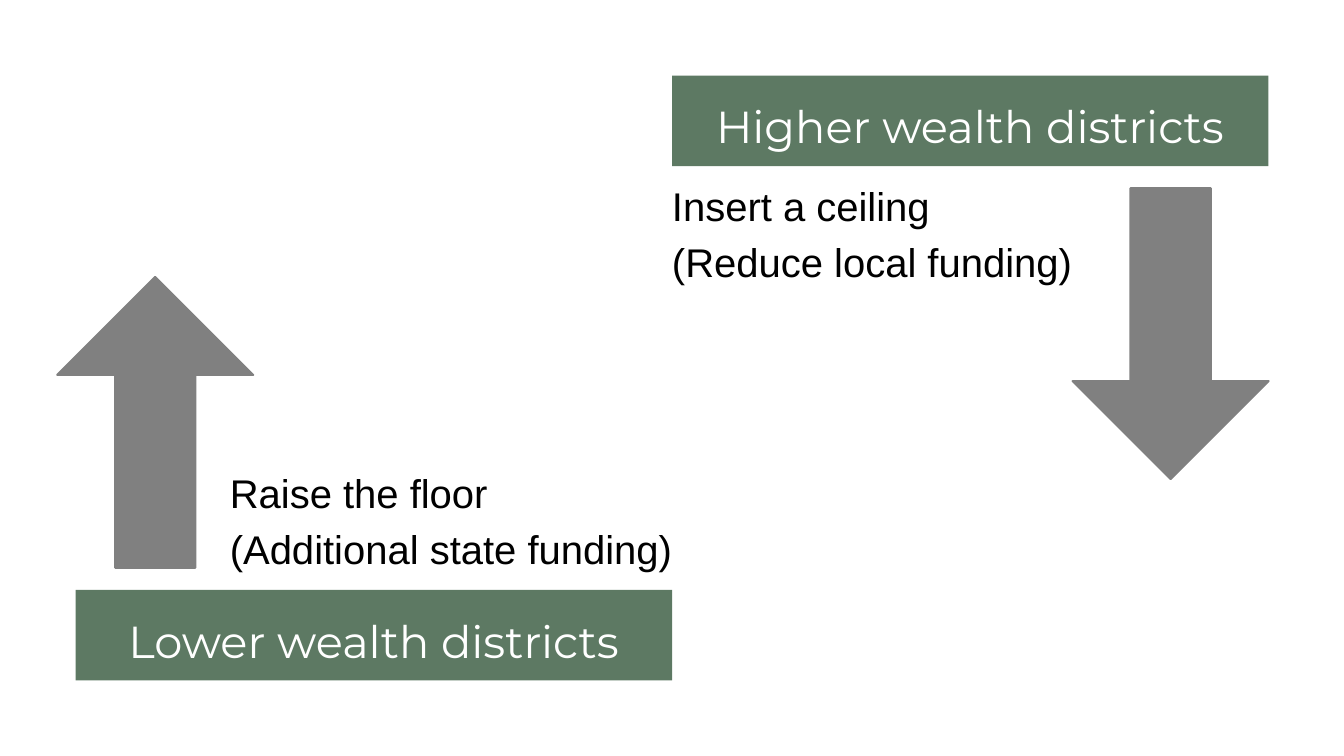
from pptx import Presentation
from pptx.dml.color import RGBColor
from pptx.enum.shapes import MSO_SHAPE
from pptx.enum.text import MSO_ANCHOR, PP_ALIGN
from pptx.util import Pt

SLIDE_WIDTH, SLIDE_HEIGHT = 1440, 810
GREEN, GRAY, WHITE, BLACK = "5D7963", "808080", "FFFFFF", "000000"

# Content: boxes are (left, top, width, height) in points
DISTRICTS = [
    {
        "title": "Higher wealth districts",
        "banner": (720, 81, 639, 97),
        "title_box": (689.76, 87.12, 699.12, 72),
        "action": ["Insert a ceiling", "(Reduce local funding)"],
        "action_box": (720, 185.76, 527.76, 120.96),
        "arrow": (1149.12, 201.6, 210.24, 311.76),
        "rotation": 180,
    },
    {
        "title": "Lower wealth districts",
        "banner": (81, 632, 639, 97),
        "title_box": (80.64, 638.64, 639.36, 70.56),
        "action": ["Raise the floor", "(Additional state funding)"],
        "action_box": (246.24, 493.92, 586.8, 115.92),
        "arrow": (61.2, 296.64, 210.24, 311.76),
        "rotation": 0,
    },
]


def color(value):
    return RGBColor.from_string(value)


def add_shape(slide, kind, box, fill, line_width=0):
    shape = slide.shapes.add_shape(kind, *map(Pt, box))
    shape.shadow.inherit = False
    shape.fill.solid()
    shape.fill.fore_color.rgb = color(fill)
    if line_width:
        shape.line.color.rgb = color(fill)
        shape.line.width = Pt(line_width)
    else:
        shape.line.fill.background()
    return shape


def add_text(slide, lines, box, font, size, text_color, spacing, align=PP_ALIGN.LEFT):
    frame = slide.shapes.add_textbox(*map(Pt, box)).text_frame
    frame.word_wrap = True
    frame.vertical_anchor = MSO_ANCHOR.TOP
    frame.margin_left = frame.margin_top = frame.margin_right = frame.margin_bottom = 0
    for index, line in enumerate(lines):
        paragraph = frame.add_paragraph() if index else frame.paragraphs[0]
        paragraph.alignment = align
        paragraph.line_spacing = Pt(spacing)
        run = paragraph.add_run()
        run.text = line
        run.font.name = font
        run.font.size = Pt(size)
        run.font.color.rgb = color(text_color)


def main():
    presentation = Presentation()
    presentation.slide_width = Pt(SLIDE_WIDTH)
    presentation.slide_height = Pt(SLIDE_HEIGHT)
    slide = presentation.slides.add_slide(presentation.slide_layouts[6])

    for district in DISTRICTS:
        # Banner and its title
        add_shape(slide, MSO_SHAPE.RECTANGLE, district["banner"], GREEN)
        add_text(slide, [district["title"]], district["title_box"], font="Montserrat",
                 size=48, text_color=WHITE, spacing=76.3, align=PP_ALIGN.CENTER)

        # Funding action
        add_text(slide, district["action"], district["action_box"], font="Arial",
                 size=42.9, text_color=BLACK, spacing=60)

        # Arrow for the direction of change
        arrow = add_shape(slide, MSO_SHAPE.UP_ARROW, district["arrow"], GRAY, line_width=2)
        arrow.adjustments[0] = 0.41
        arrow.adjustments[1] = 0.5
        arrow.rotation = district["rotation"]

    presentation.save("out.pptx")


if __name__ == "__main__":
    main()
